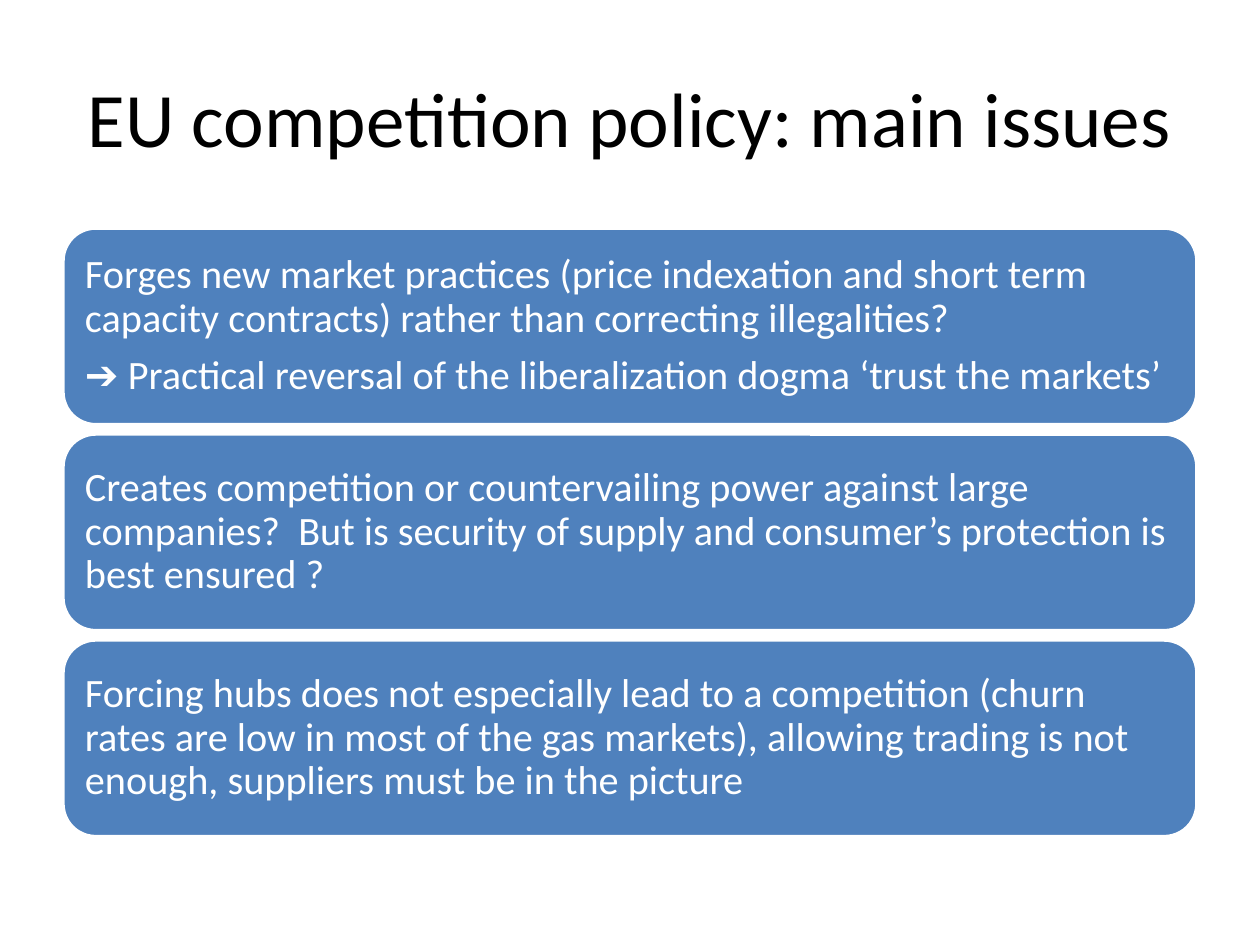
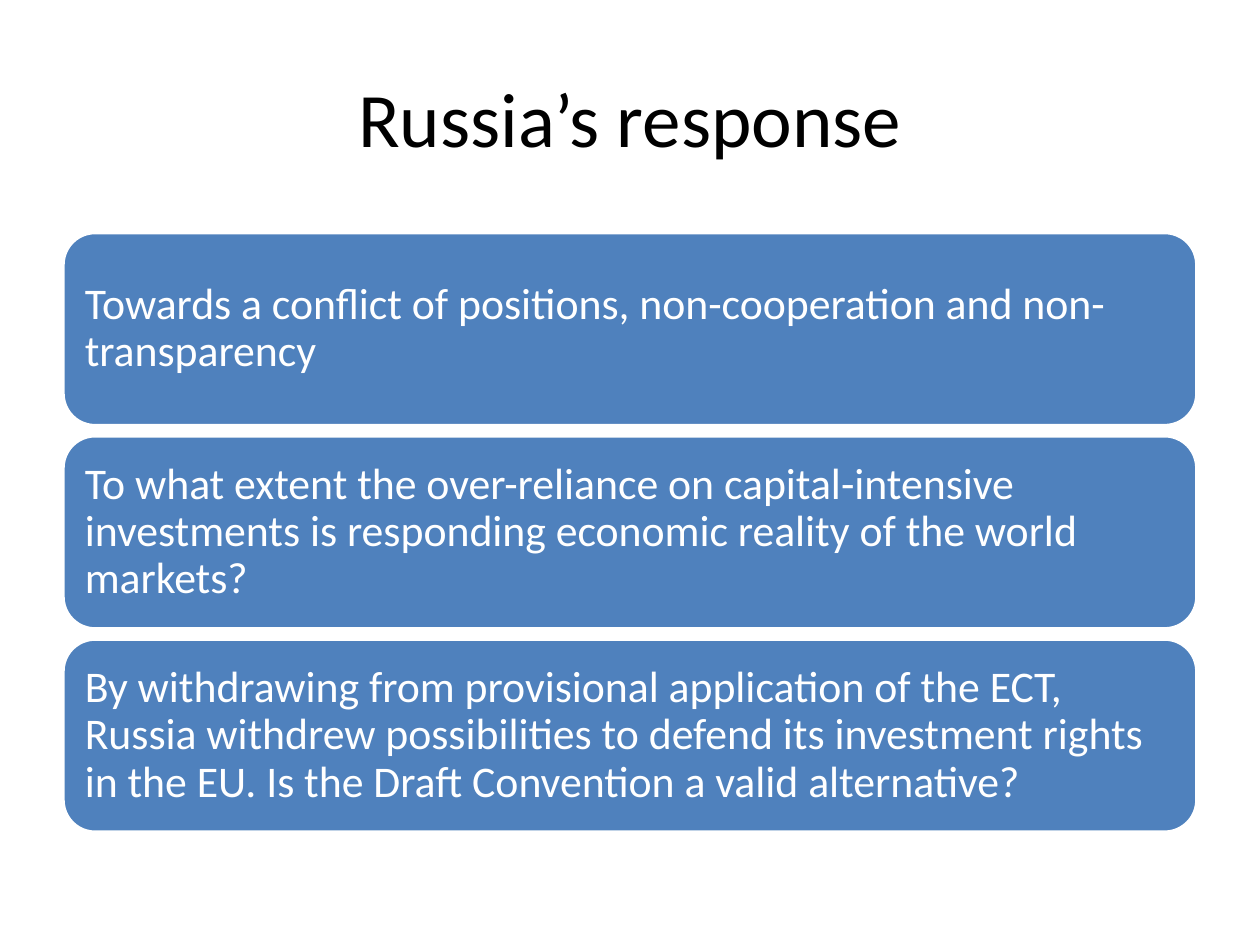
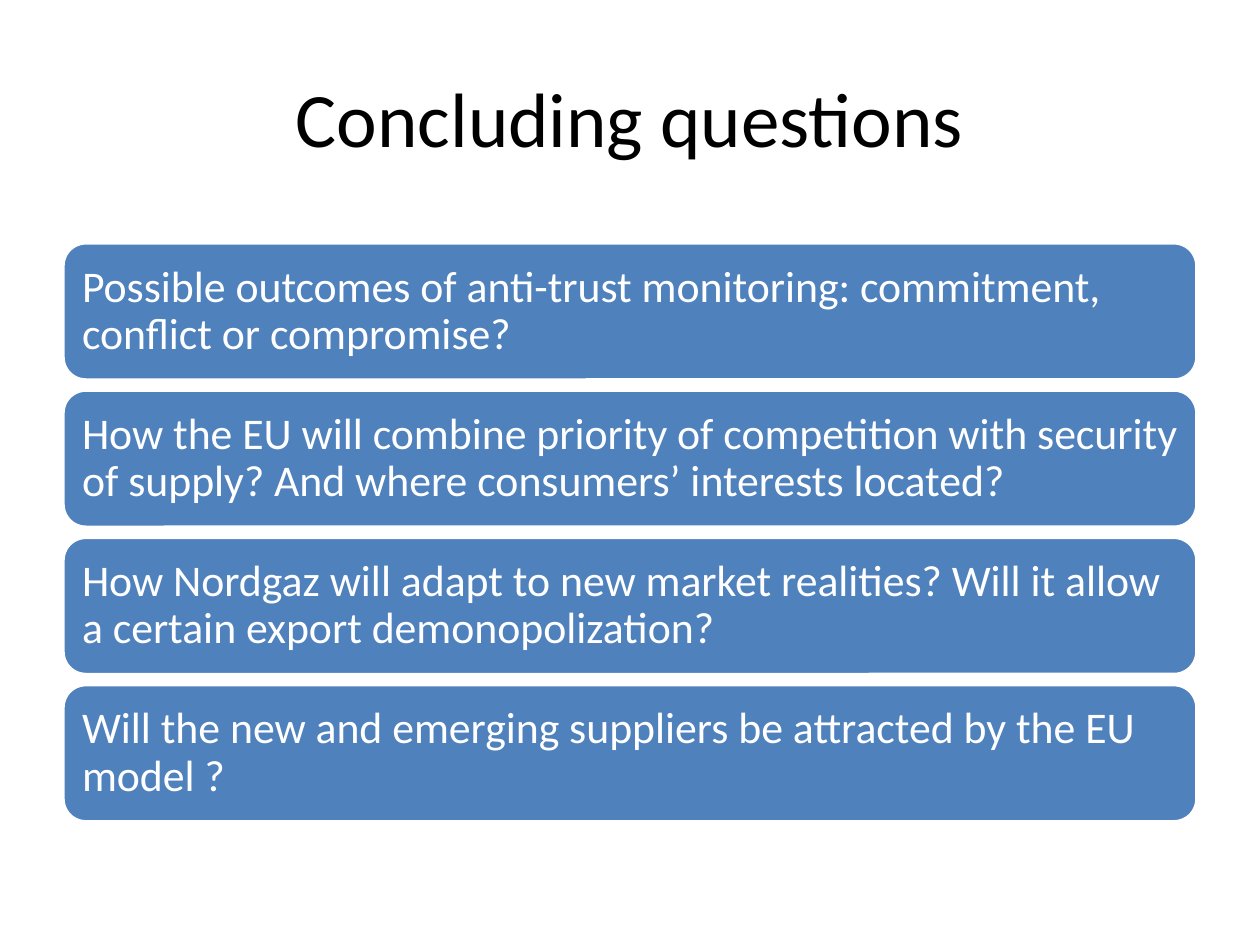
from pptx import Presentation
from pptx.dml.color import RGBColor
from pptx.enum.shapes import MSO_SHAPE
from pptx.enum.text import MSO_ANCHOR, PP_ALIGN
from pptx.util import Pt

ROUND = MSO_SHAPE.ROUNDED_RECTANGLE
MIDDLE = MSO_ANCHOR.MIDDLE
LEFT, CENTER = PP_ALIGN.LEFT, PP_ALIGN.CENTER

COLORS = {"ink": "000000", "card": "4F81BD", "white": "FFFFFF"}
FONT = "Calibri"
HEAD = (36, 21.6, 648, 90)
BODY = (36, 126, 648, 356.4)

SLIDES = [
    ("EU competition policy: main issues", 23, 112.4, [
        ["Forges new market practices (price indexation and short term "
         "capacity contracts) rather than correcting illegalities?",
         "➔ Practical reversal of the liberalization dogma ‘trust the markets’"],
        ["Creates competition or countervailing power against large companies?  "
         "But is security of supply and consumer’s protection is best ensured ?"],
        ["Forcing hubs does not especially lead to a competition (churn rates "
         "are low in most of the gas markets), allowing trading is not enough, "
         "suppliers must be in the picture"],
    ]),
    ("Russia’s response", 25, 110.4, [
        ["Towards a conflict of positions, non-cooperation and non-transparency"],
        ["To what extent the over-reliance on capital-intensive investments "
         "is responding economic reality of the world markets?"],
        ["By withdrawing from provisional application of the ECT, Russia "
         "withdrew possibilities to defend its investment rights in the EU. "
         "Is the Draft Convention a valid alternative?"],
    ]),
    ("Concluding questions", 25, 78.4, [
        ["Possible outcomes of anti-trust monitoring: commitment, "
         "conflict or compromise?"],
        ["How the EU will combine priority of competition with security of "
         "supply? And where consumers’ interests located?"],
        ["How Nordgaz will adapt to new market realities? Will it allow "
         "a certain export demonopolization?"],
        ["Will the new and emerging suppliers be attracted by the EU model ?"],
    ]),
]


def color(name):
    return RGBColor.from_string(COLORS[name])


def write(para, text, size, ink, align):
    para.alignment = align
    run = para.add_run()
    run.text = text
    run.font.name = FONT
    run.font.size = Pt(size)
    run.font.color.rgb = color(ink)


def add_title(slide, box, text):
    frame = slide.shapes.add_textbox(*map(Pt, box)).text_frame
    frame.word_wrap = True
    frame.vertical_anchor = MIDDLE
    write(frame.paragraphs[0], text, 44, "ink", CENTER)


def add_card(slide, box, lines, size):
    card = slide.shapes.add_shape(ROUND, *map(Pt, box))
    card.shadow.inherit = False
    card.fill.solid()
    card.fill.fore_color.rgb = color("card")
    card.line.color.rgb = color("white")
    card.line.width = Pt(2)
    frame = card.text_frame
    frame.word_wrap = True
    frame.vertical_anchor = MIDDLE
    frame.margin_left = frame.margin_right = Pt(7.2)
    frame.margin_top = frame.margin_bottom = Pt(7.2)
    for i, line in enumerate(lines):
        para = frame.add_paragraph() if i else frame.paragraphs[0]
        para.line_spacing = 0.9
        para.space_after = Pt(0.35 * size)
        write(para, line, size, "white", LEFT)


def add_stack(slide, box, cards, size, height):
    left, top, width, room = box
    gap = 0.23 * size
    step = height + gap
    first = top + (room - len(cards) * step + gap) / 2
    for i, lines in enumerate(cards):
        add_card(slide, (left, first + i * step, width, height), lines, size)


def main():
    deck = Presentation()
    deck.slide_width, deck.slide_height = Pt(720), Pt(540)
    blank = deck.slide_layouts[6]
    for title, size, height, cards in SLIDES:
        slide = deck.slides.add_slide(blank)
        add_title(slide, HEAD, title)
        add_stack(slide, BODY, cards, size, height)
    deck.save("out.pptx")


if __name__ == "__main__":
    main()
